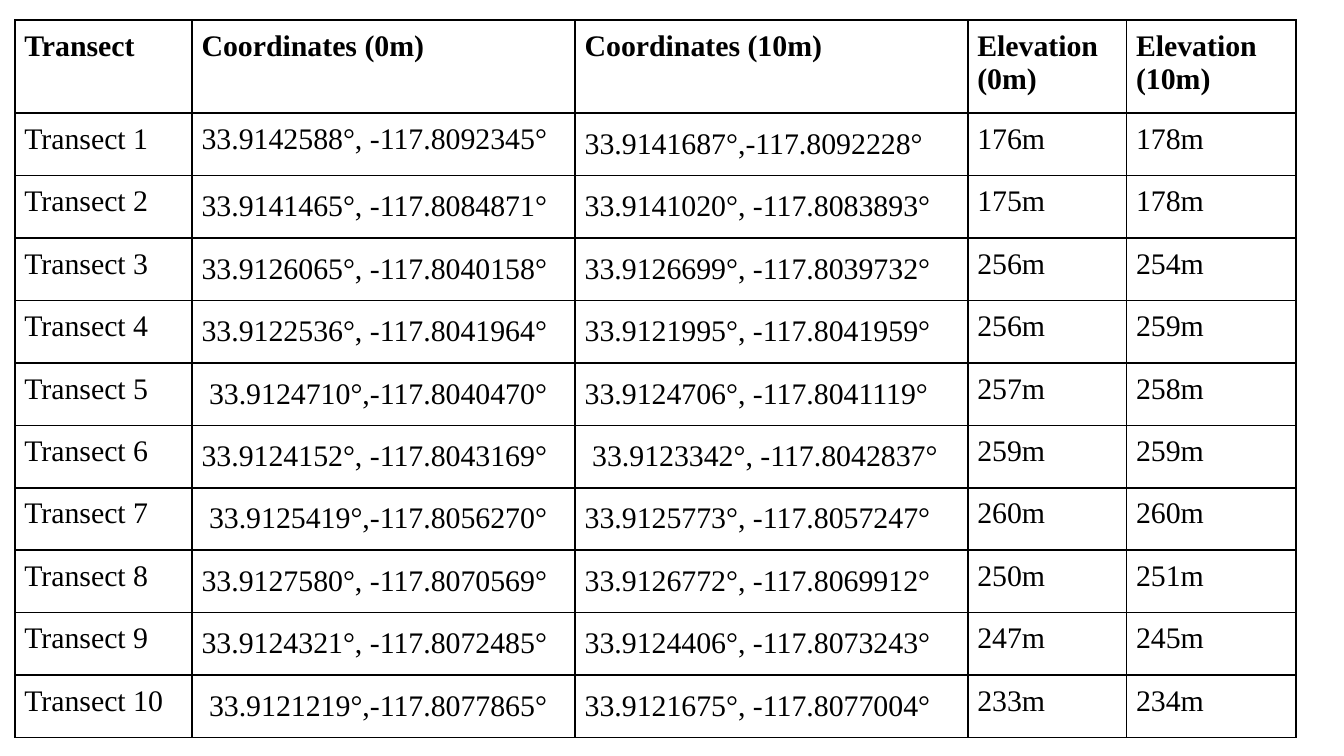
from lxml.etree import SubElement
from pptx import Presentation
from pptx.dml.color import RGBColor
from pptx.enum.text import MSO_ANCHOR
from pptx.oxml.ns import qn
from pptx.util import Cm, Pt

BLACK = RGBColor(0, 0, 0)
WHITE = RGBColor(255, 255, 255)
FONT = "Times New Roman"
MARGIN = Cm(0.18)
HEADER_HEIGHT, ROW_HEIGHT = Cm(1.76), Cm(1.18)
COLUMN_WIDTHS = [Cm(3.35), Cm(7.24), Cm(7.42), Cm(3), Cm(3.2)]

HEADERS = ["Transect", "Coordinates (0m)", "Coordinates (10m)",
           "Elevation (0m)", "Elevation (10m)"]
# Coordinates and elevations at 0 m and 10 m along each transect
TRANSECTS = [
    ("33.9142588°, -117.8092345°", "33.9141687°,-117.8092228°", 176, 178),
    ("33.9141465°, -117.8084871°", "33.9141020°, -117.8083893°", 175, 178),
    ("33.9126065°, -117.8040158°", "33.9126699°, -117.8039732°", 256, 254),
    ("33.9122536°, -117.8041964°", "33.9121995°, -117.8041959°", 256, 259),
    (" 33.9124710°,-117.8040470°", "33.9124706°, -117.8041119°", 257, 258),
    ("33.9124152°, -117.8043169°", " 33.9123342°, -117.8042837°", 259, 259),
    (" 33.9125419°,-117.8056270°", "33.9125773°, -117.8057247°", 260, 260),
    ("33.9127580°, -117.8070569°", "33.9126772°, -117.8069912°", 250, 251),
    ("33.9124321°, -117.8072485°", "33.9124406°, -117.8073243°", 247, 245),
    (" 33.9121219°,-117.8077865°", "33.9121675°, -117.8077004°", 233, 234),
]


def add_borders(cell):
    properties = cell._tc.get_or_add_tcPr()
    for side in ("a:lnL", "a:lnR", "a:lnT", "a:lnB"):
        line = SubElement(properties, qn(side), w=str(Pt(1)))
        fill = SubElement(line, qn("a:solidFill"))
        SubElement(fill, qn("a:srgbClr"), val=str(BLACK))


# Slide
presentation = Presentation()
presentation.slide_width, presentation.slide_height = Cm(25.4), Cm(14.29)
slide = presentation.slides.add_slide(presentation.slide_layouts[6])

# Table grid
rows = [HEADERS]
for number, (start, end, low, high) in enumerate(TRANSECTS, 1):
    rows.append([f"Transect {number}", start, end, f"{low}m", f"{high}m"])
table = slide.shapes.add_table(
    len(rows), len(HEADERS), Cm(0.28), Cm(0.38), sum(COLUMN_WIDTHS),
    HEADER_HEIGHT + ROW_HEIGHT * len(TRANSECTS)).table
table.first_row = table.horz_banding = False
for column, width in zip(table.columns, COLUMN_WIDTHS):
    column.width = width
for row in table.rows:
    row.height = ROW_HEIGHT
table.rows[0].height = HEADER_HEIGHT

# Cells
for row_index, texts in enumerate(rows):
    for column_index, text in enumerate(texts):
        cell = table.cell(row_index, column_index)
        add_borders(cell)
        cell.fill.solid()
        cell.fill.fore_color.rgb = WHITE
        cell.vertical_anchor = MSO_ANCHOR.TOP
        cell.margin_left = cell.margin_right = MARGIN
        cell.margin_top = cell.margin_bottom = MARGIN
        paragraph = cell.text_frame.paragraphs[0]
        # Coordinates are set looser, except the first start point
        if row_index > 0 and column_index in (1, 2) and (row_index, column_index) != (1, 1):
            paragraph.line_spacing = 1.15
        run = paragraph.add_run()
        run.text = text
        run.font.name = FONT
        run.font.size = Pt(16)
        run.font.bold = row_index == 0
        run.font.color.rgb = BLACK

presentation.save("out.pptx")
